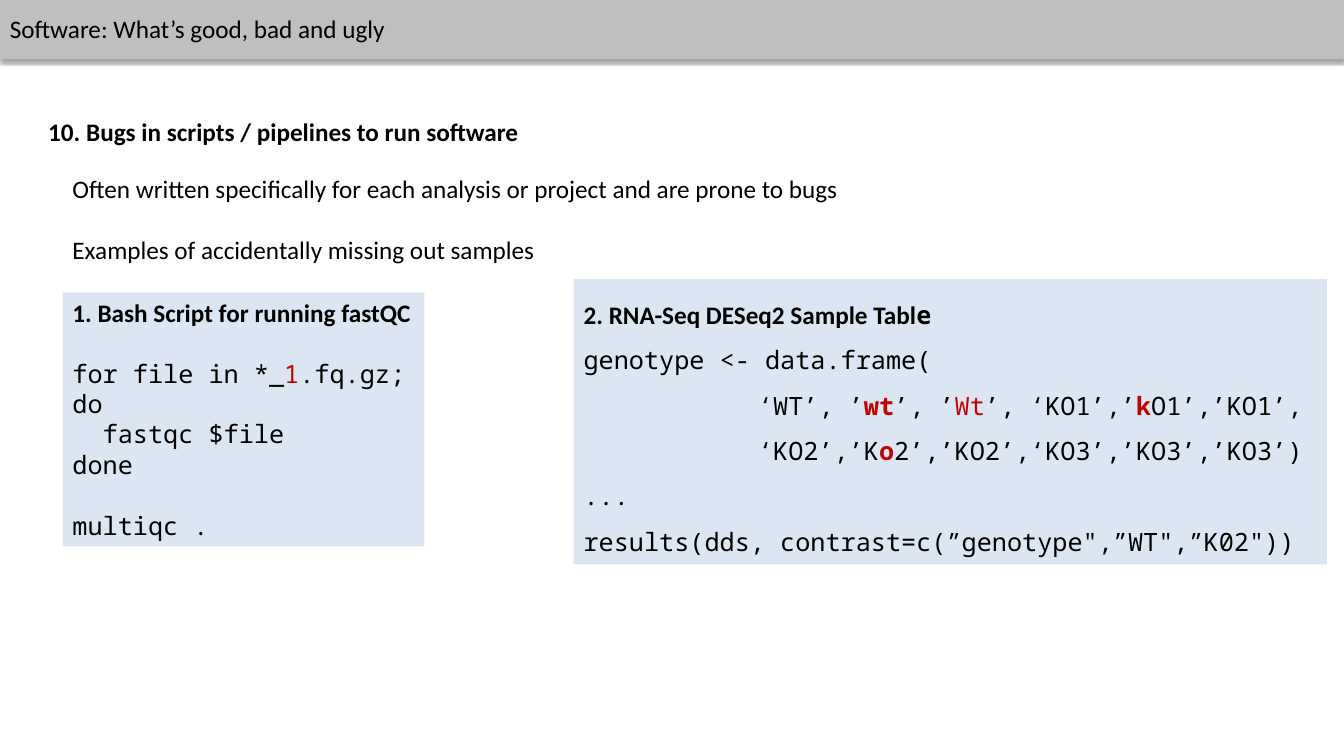
from dataclasses import dataclass

from lxml.etree import SubElement
from pptx import Presentation
from pptx.dml.color import RGBColor
from pptx.enum.shapes import MSO_SHAPE
from pptx.enum.text import MSO_ANCHOR, MSO_AUTO_SIZE
from pptx.oxml.ns import qn
from pptx.slide import Slide
from pptx.text.text import _Paragraph
from pptx.util import Inches, Pt


@dataclass(frozen=True)
class Theme:
    text: RGBColor = RGBColor(0x00, 0x00, 0x00)
    bug: RGBColor = RGBColor(0xC0, 0x00, 0x00)
    banner: RGBColor = RGBColor(0xBF, 0xBF, 0xBF)
    panel: RGBColor = RGBColor(0xDC, 0xE6, 0xF2)
    prose: str = "Calibri"
    code: str = "Noto Sans Mono"
    size: Pt = Pt(18)
    gap: Pt = Pt(22)
    border: Pt = Pt(0.75)


THEME = Theme()


@dataclass(frozen=True)
class Span:
    text: str
    bug: bool = False
    bold: bool = False
    font: str | None = None


@dataclass(frozen=True)
class Line:
    spans: tuple[Span, ...]
    font: str = THEME.prose
    bold: bool = False
    gap: bool = False


@dataclass(frozen=True)
class Block:
    left: float
    top: float
    width: float
    height: float
    lines: tuple[Line, ...]
    fill: RGBColor | None = None
    border: RGBColor | None = None
    spacing: float | None = None
    tab: float | None = None


def prose(text: str, bold: bool = False, gap: bool = False) -> Line:
    return Line((Span(text),), bold=bold, gap=gap)


def code(*spans: str | Span, gap: bool = False) -> Line:
    parts = tuple(Span(span) if isinstance(span, str) else span for span in spans)
    return Line(parts, font=THEME.code, gap=gap)


HEADING = Block(0.38, 1.11, 4.91, 0.4, (
    prose("10. Bugs in scripts / pipelines to run software", bold=True),
))
TITLE = Block(0, 0.08, 3.97, 0.4, (
    prose("Software: What’s good, bad and ugly"),
), border=THEME.banner)
BASH_EXAMPLE = Block(0.62, 2.9, 3.59, 2.52, (
    prose("1. Bash Script for running fastQC", bold=True),
    code("for file in *_", Span("1", bug=True), ".fq.gz;", gap=True),
    code("do"),
    code("  fastqc $file"),
    code("done"),
    code("multiqc .", gap=True),
), fill=THEME.panel)
INTRODUCTION = Block(0.62, 1.67, 7.95, 1.01, (
    prose("Often written specifically for each analysis or project and are prone to bugs"),
    prose("Examples of accidentally missing out samples", gap=True),
))
DESEQ_EXAMPLE = Block(5.69, 2.77, 7.47, 2.83, (
    Line((Span("2. RNA-Seq DESeq2 Sample Tabl"), Span("e", font=THEME.code)), bold=True),
    code("genotype <- data.frame("),
    code("\t\t   ‘WT’, ’", Span("wt", bug=True, bold=True), "’, ’", Span("Wt", bug=True),
         "’, ‘KO1’,’", Span("k", bug=True, bold=True), "O1’,’KO1’,"),
    code("\t\t   ‘KO2’,’K", Span("o", bug=True, bold=True), "2’,’KO2’,‘KO3’,’KO3’,’KO3’)"),
    code("..."),
    code("results(dds, contrast=c(”genotype\",”WT\",”K02\"))"),
), fill=THEME.panel, spacing=1.5, tab=0.64)


def add_tabs(paragraph: _Paragraph, step: float) -> None:
    tabs = SubElement(paragraph._p.get_or_add_pPr(), qn("a:tabLst"))
    for stop in range(1, 9):
        SubElement(tabs, qn("a:tab"), pos=str(Inches(step * stop)), algn="l")


def write_line(paragraph: _Paragraph, line: Line, block: Block) -> None:
    if block.spacing:
        paragraph.line_spacing = block.spacing
    if line.gap:
        paragraph.space_before = THEME.gap
    if block.tab:
        add_tabs(paragraph, block.tab)
    paragraph.font.name = line.font
    paragraph.font.size = THEME.size
    paragraph.font.bold = line.bold
    paragraph.font.color.rgb = THEME.text
    for span in line.spans:
        run = paragraph.add_run()
        run.text = span.text
        if span.bug:
            run.font.color.rgb = THEME.bug
        if span.bold:
            run.font.bold = True
        if span.font:
            run.font.name = span.font


def draw_block(slide: Slide, block: Block) -> None:
    box = slide.shapes.add_textbox(
        Inches(block.left), Inches(block.top), Inches(block.width), Inches(block.height))
    if block.fill is not None:
        box.fill.solid()
        box.fill.fore_color.rgb = block.fill
    if block.border is not None:
        box.line.color.rgb = block.border
        box.line.width = THEME.border
    frame = box.text_frame
    frame.word_wrap = False
    frame.auto_size = MSO_AUTO_SIZE.SHAPE_TO_FIT_TEXT
    frame.vertical_anchor = MSO_ANCHOR.TOP
    for index, line in enumerate(block.lines):
        paragraph = frame.add_paragraph() if index else frame.paragraphs[0]
        write_line(paragraph, line, block)


def draw_banner(slide: Slide, width: Inches) -> None:
    banner = slide.shapes.add_shape(MSO_SHAPE.RECTANGLE, 0, 0, width, Inches(0.58))
    banner.fill.solid()
    banner.fill.fore_color.rgb = THEME.banner
    banner.line.color.rgb = THEME.banner
    banner.line.width = THEME.border
    banner.shadow.inherit = False
    effects = banner._element.spPr.find(qn("a:effectLst"))
    shadow = SubElement(effects, qn("a:outerShdw"), blurRad=str(Pt(3.1)),
                        dist=str(Pt(1.6)), dir="5400000", rotWithShape="0")
    tint = SubElement(shadow, qn("a:srgbClr"), val=str(THEME.text))
    SubElement(tint, qn("a:alpha"), val="38000")


def main() -> None:
    deck = Presentation()
    deck.slide_width = Inches(13.33)
    deck.slide_height = Inches(7.5)
    slide = deck.slides.add_slide(deck.slide_layouts[6])
    draw_banner(slide, deck.slide_width)
    for block in (TITLE, HEADING, INTRODUCTION, BASH_EXAMPLE, DESEQ_EXAMPLE):
        draw_block(slide, block)
    deck.save("out.pptx")


if __name__ == "__main__":
    main()
